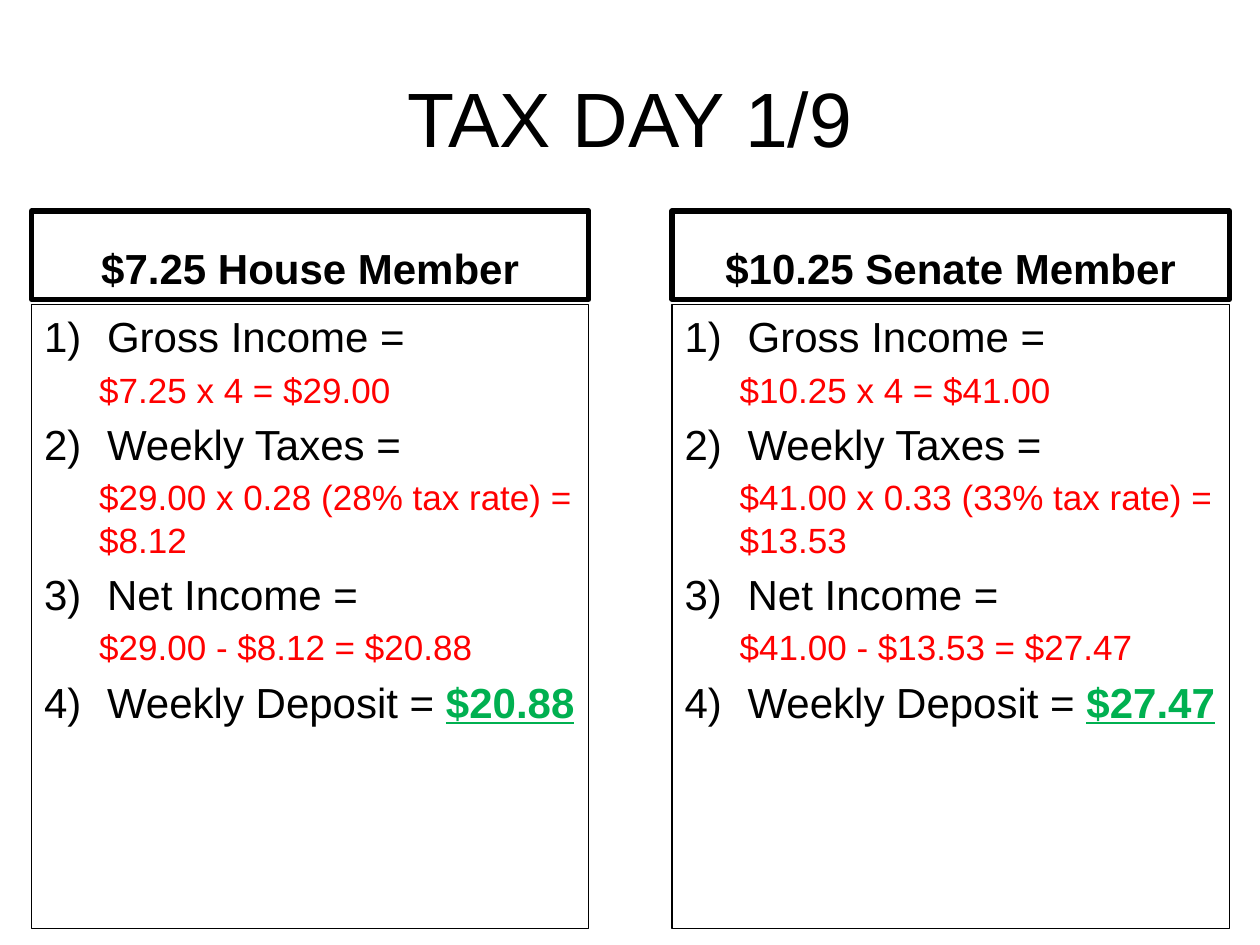
from lxml.etree import SubElement
from pptx import Presentation
from pptx.dml.color import RGBColor
from pptx.enum.text import MSO_ANCHOR, MSO_AUTO_SIZE, PP_ALIGN
from pptx.oxml.ns import qn
from pptx.util import Pt

COLORS = {"text": "000000", "working": "FF0000", "deposit": "00B050"}
TOP_HEADER, TOP_LIST = 120.5, 174
COLUMN_W, HEADER_H, LIST_H = 318.5, 50.5, 356.5

COLUMNS = [
    (18, "$7.25 House Member", [
        ("Gross Income =", "$7.25 x 4 = $29.00"),
        ("Weekly Taxes =", "$29.00 x 0.28 (28% tax rate) = $8.12"),
        ("Net Income =", "$29.00 - $8.12 = $20.88"),
    ], "$20.88"),
    (384, "$10.25 Senate Member", [
        ("Gross Income =", "$10.25 x 4 = $41.00"),
        ("Weekly Taxes =", "$41.00 x 0.33 (33% tax rate) = $13.53"),
        ("Net Income =", "$41.00 - $13.53 = $27.47"),
    ], "$27.47"),
]


class Deck:
    font = "Arial"

    def __init__(self, prs):
        self.s = prs.slides.add_slide(prs.slide_layouts.get_by_name("Comparison"))

    def place(self, idx, x, y, w, h, anchor, line=None):
        """Move a placeholder, outline it if asked, and return its text frame."""
        sp = self.s.placeholders[idx]
        sp.left, sp.top, sp.width, sp.height = Pt(x), Pt(y), Pt(w), Pt(h)
        if line:
            sp.line.color.rgb = RGBColor.from_string(COLORS["text"])
            sp.line.width = Pt(line)
        tf = sp.text_frame
        tf.word_wrap = True
        tf.auto_size = MSO_AUTO_SIZE.NONE
        tf.vertical_anchor = anchor
        return tf

    def run(self, p, text, size, color="text", bold=False, underline=None):
        r = p.add_run()
        r.text = text
        r.font.name, r.font.size = self.font, Pt(size)
        r.font.bold, r.font.underline = bold, underline
        r.font.color.rgb = RGBColor.from_string(COLORS[color])

    def heading(self, tf, text, size, bold=False):
        p = tf.paragraphs[0]
        p.alignment = PP_ALIGN.CENTER
        p.space_before = Pt(0)
        self.run(p, text, size, bold=bold)

    def paragraph(self, tf, level, margin, indent, space):
        first = not tf.paragraphs[0].runs
        p = tf.paragraphs[0] if first else tf.add_paragraph()
        p.level = level
        p.space_before = Pt(0 if first else space)
        pPr = p._p.get_or_add_pPr()
        pPr.set("marL", str(Pt(margin)))
        pPr.set("indent", str(Pt(indent)))
        return p, pPr

    def step(self, tf, text):
        p, pPr = self.paragraph(tf, 0, 36, -36, 4.8)
        SubElement(pPr, qn("a:buFont"), typeface="+mj-lt")
        SubElement(pPr, qn("a:buAutoNum"), type="arabicParenR")
        self.run(p, text, 24)
        return p

    def working(self, tf, text):
        p, pPr = self.paragraph(tf, 1, 31.5, 0, 4)
        SubElement(pPr, qn("a:buNone"))
        self.run(p, text, 20, "working")

    def column(self, idx, x, header, steps, deposit):
        tf = self.place(idx, x, TOP_HEADER, COLUMN_W, HEADER_H, MSO_ANCHOR.BOTTOM, 3)
        self.heading(tf, header, 24, bold=True)
        tf = self.place(idx + 1, x, TOP_LIST, COLUMN_W, LIST_H, MSO_ANCHOR.TOP, 0.75)
        for label, sum_text in steps:
            self.step(tf, label)
            self.working(tf, sum_text)
        p = self.step(tf, "Weekly Deposit = ")
        self.run(p, deposit, 24, "deposit", bold=True, underline=True)


def main():
    prs = Presentation()
    prs.slide_width, prs.slide_height = Pt(720), Pt(540)
    deck = Deck(prs)
    tf = deck.place(0, 36, 21.6, 648, 90, MSO_ANCHOR.MIDDLE)
    deck.heading(tf, "TAX DAY 1/9", 44)
    for idx, column in zip((1, 3), COLUMNS):
        deck.column(idx, *column)
    for sp in list(deck.s.placeholders):
        if not sp.text_frame.text:
            sp.element.getparent().remove(sp.element)
    prs.save("out.pptx")


if __name__ == "__main__":
    main()
